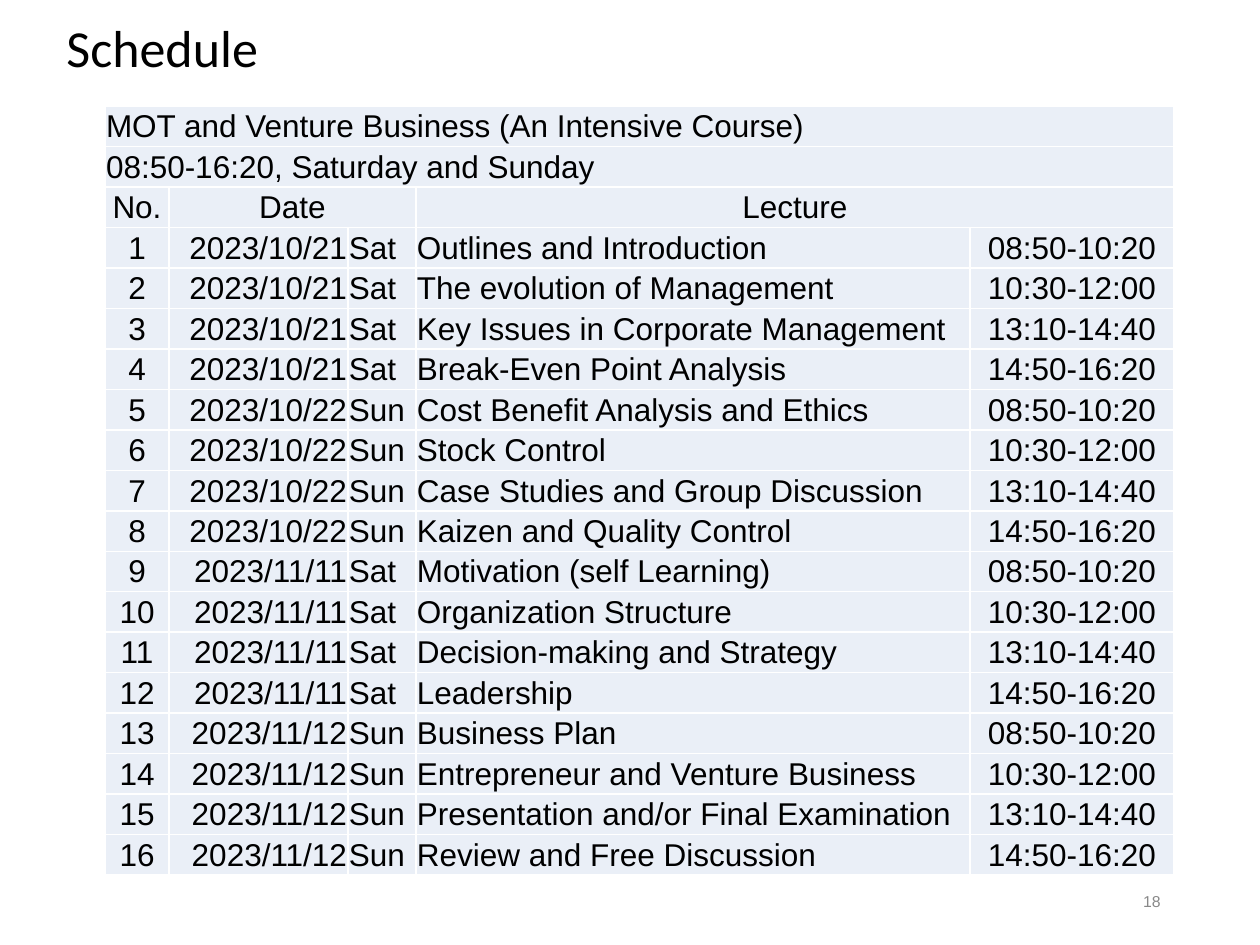
from dataclasses import dataclass
from typing import Any

from lxml.etree import SubElement
from pptx import Presentation
from pptx.dml.color import RGBColor
from pptx.enum.text import MSO_ANCHOR, PP_ALIGN
from pptx.oxml.ns import qn
from pptx.util import Emu, Pt


@dataclass(frozen=True)
class Theme:
    ink: str = "000000"
    muted: str = "898989"
    band: str = "EAEFF7"
    border: str = "FFFFFF"
    heading_font: str = "Calibri"
    body_font: str = "Arial"
    heading_size: float = 29.7
    table_size: float = 18
    number_size: float = 9
    border_width: float = 1


@dataclass(frozen=True)
class TextStyle:
    font: str
    size: float
    color: str
    align: PP_ALIGN = PP_ALIGN.LEFT
    line_spacing: float = 1.0


@dataclass(frozen=True)
class Label:
    text: str
    left: int
    top: int
    width: int
    height: int
    style: TextStyle


@dataclass(frozen=True)
class Entry:
    text: str
    row: int
    column: int
    align: PP_ALIGN = PP_ALIGN.LEFT
    columns: int = 1


THEME = Theme()
EMU_PER_PX = 914400 / 126
PAGE_WIDTH, PAGE_HEIGHT = 1260, 945
TABLE_LEFT, TABLE_TOP, TABLE_HEIGHT = 105, 106, 770
COLUMN_WIDTHS = (64, 179, 68, 554, 204)
COLUMN_ALIGNS = (PP_ALIGN.CENTER, PP_ALIGN.RIGHT, PP_ALIGN.LEFT, PP_ALIGN.LEFT, PP_ALIGN.CENTER)
DAYS = (("2023/10/21", "Sat"), ("2023/10/22", "Sun"), ("2023/11/11", "Sat"), ("2023/11/12", "Sun"))
TIMES = ("08:50-10:20", "10:30-12:00", "13:10-14:40", "14:50-16:20")
LECTURES = (
    "Outlines and Introduction",
    "The evolution of Management",
    "Key Issues in Corporate Management",
    "Break-Even Point Analysis",
    "Cost Benefit Analysis and Ethics",
    "Stock Control",
    "Case Studies and Group Discussion",
    "Kaizen and Quality Control",
    "Motivation (self Learning)",
    "Organization Structure",
    "Decision-making and Strategy",
    "Leadership",
    "Business Plan",
    "Entrepreneur and Venture Business",
    "Presentation and/or Final Examination",
    "Review and Free Discussion",
)
HEADINGS = (
    Entry("MOT and Venture Business (An Intensive Course)", 0, 0, columns=5),
    Entry("08:50-16:20, Saturday and Sunday", 1, 0, columns=5),
    Entry("No.", 2, 0, PP_ALIGN.CENTER),
    Entry("Date", 2, 1, PP_ALIGN.CENTER, 2),
    Entry("Lecture", 2, 3, PP_ALIGN.CENTER, 2),
)
HEADING_ROWS = 3
LABELS = (
    Label("Schedule", 54, 16, 1029, 69,
          TextStyle(THEME.heading_font, THEME.heading_size, THEME.ink, line_spacing=0.9)),
    Label("18", 890, 876, 283, 50,
          TextStyle(THEME.body_font, THEME.number_size, THEME.muted, PP_ALIGN.RIGHT)),
)


def px(length: float) -> Emu:
    return Emu(round(length * EMU_PER_PX))


def set_values(target: Any, values: dict[str, Any]) -> None:
    for name, value in values.items():
        setattr(target, name, value)


def write_text(frame: Any, text: str, style: TextStyle) -> None:
    para = frame.paragraphs[0]
    set_values(para, {"alignment": style.align, "line_spacing": style.line_spacing})
    span = para.add_run()
    span.text = text
    set_values(span.font, {"name": style.font, "size": Pt(style.size)})
    span.font.color.rgb = RGBColor.from_string(style.color)


def draw_label(page: Any, label: Label) -> None:
    box = page.shapes.add_textbox(px(label.left), px(label.top), px(label.width), px(label.height))
    set_values(box.text_frame, {"word_wrap": True, "vertical_anchor": MSO_ANCHOR.MIDDLE})
    write_text(box.text_frame, label.text, label.style)


def format_cell(cell: Any) -> None:
    set_values(cell, {
        "margin_left": px(1),
        "margin_right": px(1),
        "margin_top": px(1),
        "margin_bottom": px(0),
        "vertical_anchor": MSO_ANCHOR.MIDDLE,
    })
    properties = cell._tc.get_or_add_tcPr()
    for side in ("a:lnL", "a:lnR", "a:lnT", "a:lnB"):
        line = SubElement(properties, qn(side), w=str(Pt(THEME.border_width)))
        SubElement(SubElement(line, qn("a:solidFill")), qn("a:srgbClr"), val=THEME.border)
    cell.fill.solid()
    cell.fill.fore_color.rgb = RGBColor.from_string(THEME.band)


def schedule_entries() -> list[Entry]:
    entries = list(HEADINGS)
    for index, lecture in enumerate(LECTURES):
        day, slot = divmod(index, len(TIMES))
        values = (str(index + 1), *DAYS[day], lecture, TIMES[slot])
        for column, (text, align) in enumerate(zip(values, COLUMN_ALIGNS)):
            entries.append(Entry(text, HEADING_ROWS + index, column, align))
    return entries


def draw_schedule(page: Any) -> None:
    row_count = HEADING_ROWS + len(LECTURES)
    table = page.shapes.add_table(
        row_count, len(COLUMN_WIDTHS), px(TABLE_LEFT), px(TABLE_TOP),
        px(sum(COLUMN_WIDTHS)), px(TABLE_HEIGHT),
    ).table
    set_values(table, {"first_row": False, "horz_banding": False})
    for column, width in zip(table.columns, COLUMN_WIDTHS):
        column.width = px(width)
    for row in table.rows:
        row.height = px(TABLE_HEIGHT / row_count)
    for cell in table.iter_cells():
        format_cell(cell)
    for entry in schedule_entries():
        cell = table.cell(entry.row, entry.column)
        if entry.columns > 1:
            cell.merge(table.cell(entry.row, entry.column + entry.columns - 1))
        style = TextStyle(THEME.body_font, THEME.table_size, THEME.ink, entry.align)
        write_text(cell.text_frame, entry.text, style)


def main() -> None:
    deck = Presentation()
    set_values(deck, {"slide_width": px(PAGE_WIDTH), "slide_height": px(PAGE_HEIGHT)})
    page = deck.slides.add_slide(deck.slide_layouts[6])
    for label in LABELS:
        draw_label(page, label)
    draw_schedule(page)
    deck.save("out.pptx")


if __name__ == "__main__":
    main()
